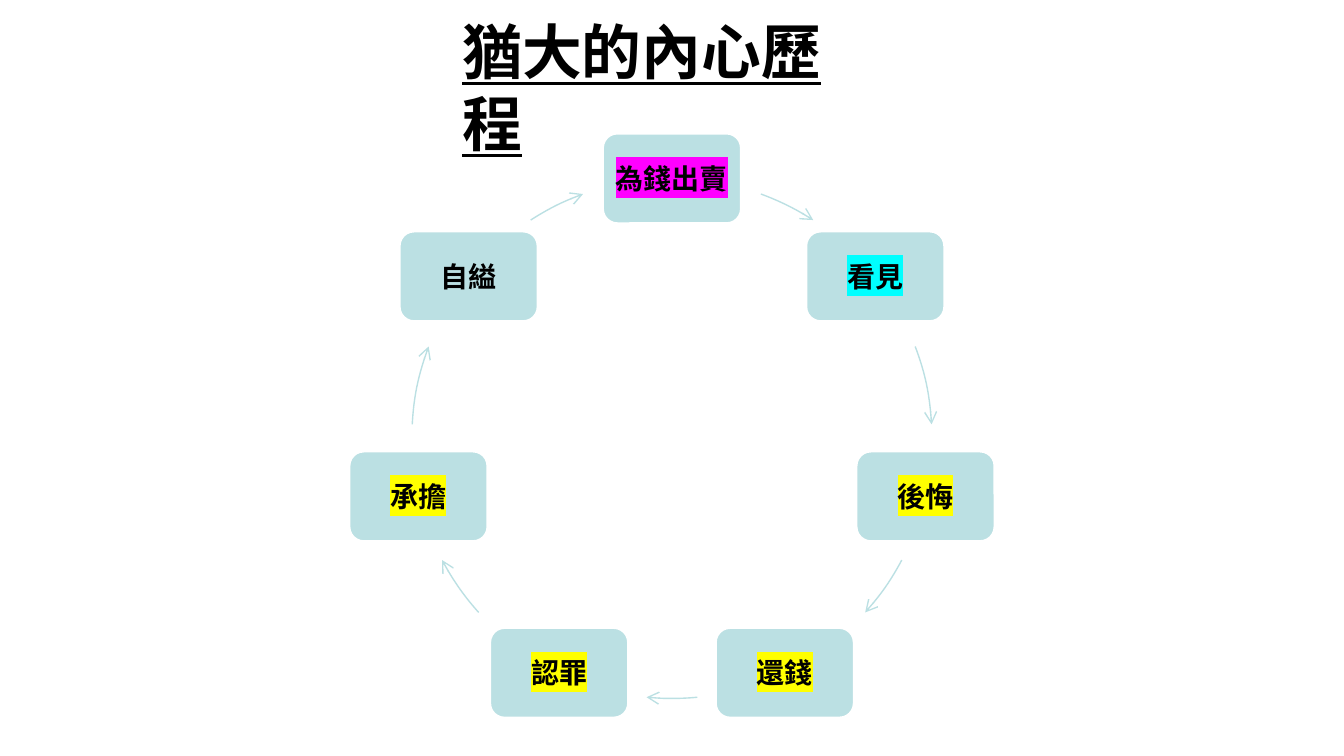
from dataclasses import dataclass
from math import cos, radians, sin
from typing import Optional

from lxml.etree import SubElement
from pptx import Presentation
from pptx.dml.color import RGBColor as Color
from pptx.enum.shapes import MSO_SHAPE as Kind
from pptx.enum.text import MSO_ANCHOR as Anchor, MSO_AUTO_SIZE as Fit, PP_ALIGN as Align
from pptx.oxml.ns import qn
from pptx.slide import Slide
from pptx.text.text import TextFrame as Frame
from pptx.util import Inches, Pt


@dataclass(frozen=True)
class Theme:
    font: str = "Noto Sans CJK TC"
    ink: str = "000000"
    box: str = "BBE0E3"
    edge: str = "FFFFFF"
    title: float = 32
    label: float = 15
    border: float = 2
    arc: float = 0.75


@dataclass(frozen=True)
class Step:
    text: str
    start: float
    end: float
    mark: Optional[str] = None


LOOK = Theme()
WIDE = Inches(10)
HIGH = WIDE * 9 // 16
MID_X, MID_Y = WIDE * 0.5, HIGH * 0.58
RADIUS = WIDE * 0.1935
BOX_W, BOX_H = WIDE * 0.104, HIGH * 0.121
PAD = Inches(0.06)

STEPS = [
    Step("為錢出賣", 20, 32.9, "FF00FF"),
    Step("看見", 69.3, 86.9, "00FFFF"),
    Step("後悔", 117.9, 132, "FFFF00"),
    Step("還錢", 174.4, 185.6, "FFFF00"),
    Step("認罪", 228, 242.1, "FFFF00"),
    Step("承擔", 273.1, 290.7, "FFFF00"),
    Step("自縊", 327.1, 340),
]


def write(frame: Frame, text: str, size: float, align: Align,
          line: bool = False, mark: Optional[str] = None) -> None:
    frame.text = text
    frame.word_wrap = True
    para = frame.paragraphs[0]
    para.alignment = align
    font = para.runs[0].font
    font.size, font.bold, font.underline = Pt(size), True, line
    font.color.rgb = Color.from_string(LOOK.ink)
    props = para.runs[0]._r.get_or_add_rPr()
    if mark:
        SubElement(SubElement(props, qn("a:highlight")), qn("a:srgbClr"), val=mark)
    font.name = LOOK.font
    SubElement(props, qn("a:ea"), typeface=LOOK.font)


def draw_title(slide: Slide, text: str) -> None:
    title = slide.shapes.title
    title.left, title.top = int(WIDE * 0.334), int(HIGH * 0.011)
    title.width, title.height = int(WIDE * 0.331), int(HIGH * 0.114)
    frame = title.text_frame
    frame.vertical_anchor = Anchor.TOP
    frame.auto_size = Fit.NONE
    write(frame, text, LOOK.title, Align.LEFT, line=True)


def draw_box(slide: Slide, step: Step, angle: float) -> None:
    turn = radians(angle)
    left = MID_X + RADIUS * sin(turn) - BOX_W / 2
    top = MID_Y - RADIUS * cos(turn) - BOX_H / 2
    box = slide.shapes.add_shape(Kind.ROUNDED_RECTANGLE, int(left), int(top), int(BOX_W), int(BOX_H))
    box.shadow.inherit = False
    box.fill.solid()
    box.fill.fore_color.rgb = Color.from_string(LOOK.box)
    box.line.color.rgb = Color.from_string(LOOK.edge)
    box.line.width = Pt(LOOK.border)
    frame = box.text_frame
    frame.margin_left = frame.margin_right = PAD
    frame.margin_top = frame.margin_bottom = PAD
    frame.vertical_anchor = Anchor.MIDDLE
    write(frame, step.text, LOOK.label, Align.CENTER, mark=step.mark)


def draw_arc(slide: Slide, step: Step) -> None:
    side = int(RADIUS * 2)
    arc = slide.shapes.add_shape(Kind.ARC, int(MID_X - RADIUS), int(MID_Y - RADIUS), side, side)
    for i, angle in enumerate((step.start, step.end)):
        arc.adjustments[i] = (angle - 90) % 360 * 0.6
    arc.shadow.inherit = False
    arc.fill.background()
    arc.line.color.rgb = Color.from_string(LOOK.box)
    arc.line.width = Pt(LOOK.arc)
    SubElement(arc.line._get_or_add_ln(), qn("a:tailEnd"), type="arrow")


def main() -> None:
    deck = Presentation()
    deck.slide_width, deck.slide_height = WIDE, HIGH
    slide = deck.slides.add_slide(deck.slide_layouts[5])
    draw_title(slide, "猶大的內心歷程")
    for i, step in enumerate(STEPS):
        draw_box(slide, step, i * 360 / len(STEPS))
        draw_arc(slide, step)
    deck.save("out.pptx")


if __name__ == "__main__":
    main()
